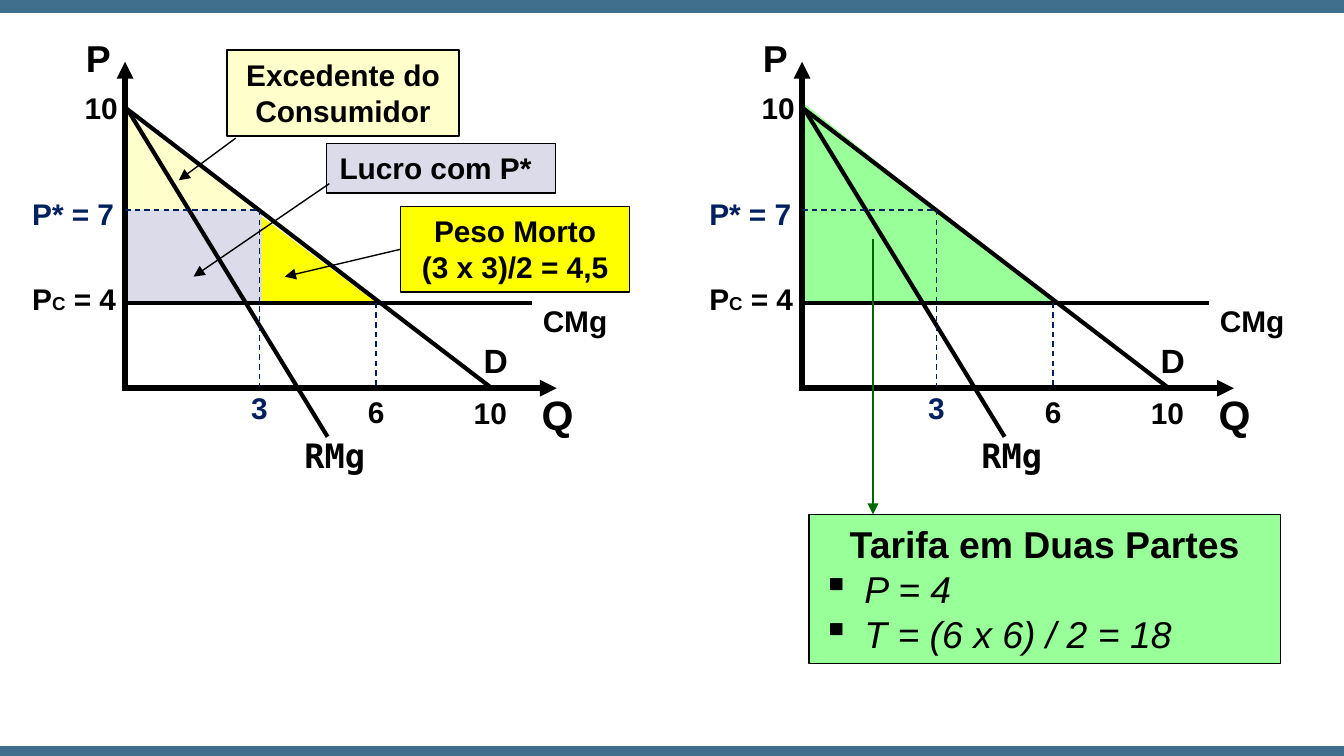
from lxml import etree
from pptx import Presentation
from pptx.dml.color import RGBColor
from pptx.enum.dml import MSO_LINE
from pptx.enum.shapes import MSO_CONNECTOR, MSO_SHAPE
from pptx.enum.text import MSO_ANCHOR, MSO_AUTO_SIZE, PP_ALIGN
from pptx.oxml.ns import qn
from pptx.util import Pt

RECTANGLE = MSO_SHAPE.RECTANGLE
TRIANGLE = MSO_SHAPE.RIGHT_TRIANGLE
STRAIGHT = MSO_CONNECTOR.STRAIGHT
DASH = MSO_LINE.DASH
LEFT, CENTER = PP_ALIGN.LEFT, PP_ALIGN.CENTER
LEFT_SIDE = 1

WIDTH, HEIGHT = 720, 405
GRAPH_OFFSETS = [0, 362.7]
BULLET_INDENT = 22.5
COLORS = {
    "black": "000000", "navy": "002060", "band": "406F8D", "cream": "FFFFCC",
    "lilac": "DBDBE9", "yellow": "FFFF00", "green": "99FF99", "dark green": "006600",
}

BAND_TOPS = [1.4, 401.6]
AREAS = [
    (TRIANGLE, "yellow", 139, 115.2, 63.2, 47.4),
    (TRIANGLE, "cream", 67.5, 60.5, 71.5, 53.3),
    (RECTANGLE, "lilac", 65.5, 112.3, 74.7, 49.7),
    (TRIANGLE, "green", 430.6, 55.4, 134.6, 107.3),
]
GRAPH_LINES = [
    ((67, 208), (67, 33.1), {"width": 3, "arrow": True}),
    ((65.5, 208), (298.3, 208), {"width": 3, "arrow": True}),
    ((67, 57.6), (263.5, 208), {"width": 2.25}),
    ((69, 59.8), (175.5, 234), {"width": 2.25}),
    ((67.5, 162.2), (285, 162.2), {"width": 2.25}),
    ((139, 112.5), (139, 207.5), {"color": "navy", "dash": DASH}),
    ((67, 112.5), (139, 112.5), {"color": "navy", "dash": DASH}),
    ((201.4, 162.2), (201.4, 207.5), {"color": "navy", "dash": DASH}),
]
GRAPH_LABELS = [
    ("P", 38.9, 15.1, 22.3, {"size": 20}),
    ("Q", 283, 205.2, 22.3, {"size": 22}),
    ("10", 246.7, 208, 37.4, {}),
    ("10", 38.2, 44.6, 37.4, {}),
    ("RMg", 156, 229.7, 54, {"size": 18, "font": "DejaVu Sans Mono"}),
    ("D", 252, 178.6, 54, {"size": 18}),
    ([("P", 16), ("C", 10), (" = 4", 16)], 10.2, 146.9, 64, {}),
    ("CMg", 283.7, 158.4, 54, {}),
    ("3", 127.4, 205.2, 37.4, {"color": "navy"}),
    ("P* = 7", 10.2, 101.5, 72, {"color": "navy"}),
    ("6", 190, 207.4, 37.4, {}),
]
BOXES = {
    "surplus": ("cream", 121.7, 26.8, 124.2, 46.1,
                [("Excedente do Consumidor", {"align": CENTER})]),
    "profit": ("lilac", 174.8, 76.9, 122.7, 26.6, [("Lucro com P*", {})]),
    "deadweight": ("yellow", 214.6, 110.5, 122.7, 46.1,
                   [("Peso Morto", {"align": CENTER}),
                    ("(3 x 3)/2 = 4,5", {"align": CENTER})]),
    "tariff": ("green", 433.5, 275.6, 252.5, 79.9,
               [("Tarifa em Duas Partes", {"size": 20, "align": CENTER}),
                ("P = 4", {"size": 20, "bold": False, "italic": True, "bullet": "▪"}),
                ("T = (6 x 6) / 2 = 18",
                 {"size": 20, "bold": False, "italic": True, "bullet": "▪"})]),
}
POINTERS = [
    ((126.3, 74), (95.8, 96.6), "black", None),
    ((176.4, 98.4), (103.7, 148.2), "black", None),
    ((214.6, 133.5), (152.6, 148.2), "black", "deadweight"),
    ((467.7, 128), (467.7, 275.6), "dark green", None),
]


def rgb(name):
    return RGBColor.from_string(COLORS[name])


def write(paragraph, text, size=16, bold=True, italic=False, color="black",
          font="Arial", align=LEFT, bullet=None):
    paragraph.alignment = align
    pieces = [(text, size)] if isinstance(text, str) else text
    for piece, piece_size in pieces:
        run = paragraph.add_run()
        run.text = piece
        run.font.name = font
        run.font.size = Pt(piece_size)
        run.font.bold = bold
        run.font.italic = italic
        run.font.color.rgb = rgb(color)
    if bullet:
        properties = paragraph._p.get_or_add_pPr()
        properties.set("marL", str(Pt(BULLET_INDENT)))
        properties.set("indent", str(-Pt(BULLET_INDENT)))
        etree.SubElement(properties, qn("a:buChar")).set("char", bullet)


def prepare_frame(shape):
    frame = shape.text_frame
    frame.word_wrap = True
    frame.auto_size = MSO_AUTO_SIZE.SHAPE_TO_FIT_TEXT
    frame.vertical_anchor = MSO_ANCHOR.TOP
    return frame


def add_area(slide, kind, fill, left, top, width, height, line=None, line_width=0.75):
    shape = slide.shapes.add_shape(kind, Pt(left), Pt(top), Pt(width), Pt(height))
    shape.shadow.inherit = False
    shape.fill.solid()
    shape.fill.fore_color.rgb = rgb(fill)
    if line:
        shape.line.color.rgb = rgb(line)
        shape.line.width = Pt(line_width)
    else:
        shape.line.fill.background()
    return shape


def add_line(slide, start, end, color="black", width=0.75, dash=None, arrow=False):
    points = [Pt(value) for value in (*start, *end)]
    connector = slide.shapes.add_connector(STRAIGHT, *points)
    connector.line.color.rgb = rgb(color)
    connector.line.width = Pt(width)
    if dash:
        connector.line.dash_style = dash
    if arrow:
        outline = connector.line._get_or_add_ln()
        etree.SubElement(outline, qn("a:tailEnd")).set("type", "triangle")
    etree.SubElement(connector._element.spPr, qn("a:effectLst"))
    return connector


def add_label(slide, text, left, top, width, text_format):
    height = text_format.get("size", 16) * 1.2 + 7.2
    label = slide.shapes.add_textbox(Pt(left), Pt(top), Pt(width), Pt(height))
    write(prepare_frame(label).paragraphs[0], text, **text_format)


def add_box(slide, fill, left, top, width, height, paragraphs):
    box = add_area(slide, RECTANGLE, fill, left, top, width, height, "black")
    frame = prepare_frame(box)
    for index, (text, text_format) in enumerate(paragraphs):
        paragraph = frame.add_paragraph() if index else frame.paragraphs[0]
        write(paragraph, text, **text_format)
    return box


def main():
    presentation = Presentation()
    presentation.slide_width, presentation.slide_height = Pt(WIDTH), Pt(HEIGHT)
    slide = presentation.slides.add_slide(presentation.slide_layouts[6])

    for top in BAND_TOPS:
        add_area(slide, RECTANGLE, "band", 0, top, WIDTH, 3.6, "band", 4.33)
    for area in AREAS:
        add_area(slide, *area)
    for offset in GRAPH_OFFSETS:
        for (x1, y1), (x2, y2), line_format in GRAPH_LINES:
            add_line(slide, (x1 + offset, y1), (x2 + offset, y2), **line_format)
        for text, left, top, width, text_format in GRAPH_LABELS:
            add_label(slide, text, left + offset, top, width, text_format)
    boxes = {name: add_box(slide, *box) for name, box in BOXES.items()}
    for start, end, color, source in POINTERS:
        pointer = add_line(slide, start, end, color, arrow=True)
        if source:
            pointer.begin_connect(boxes[source], LEFT_SIDE)

    presentation.save("out.pptx")


if __name__ == "__main__":
    main()
